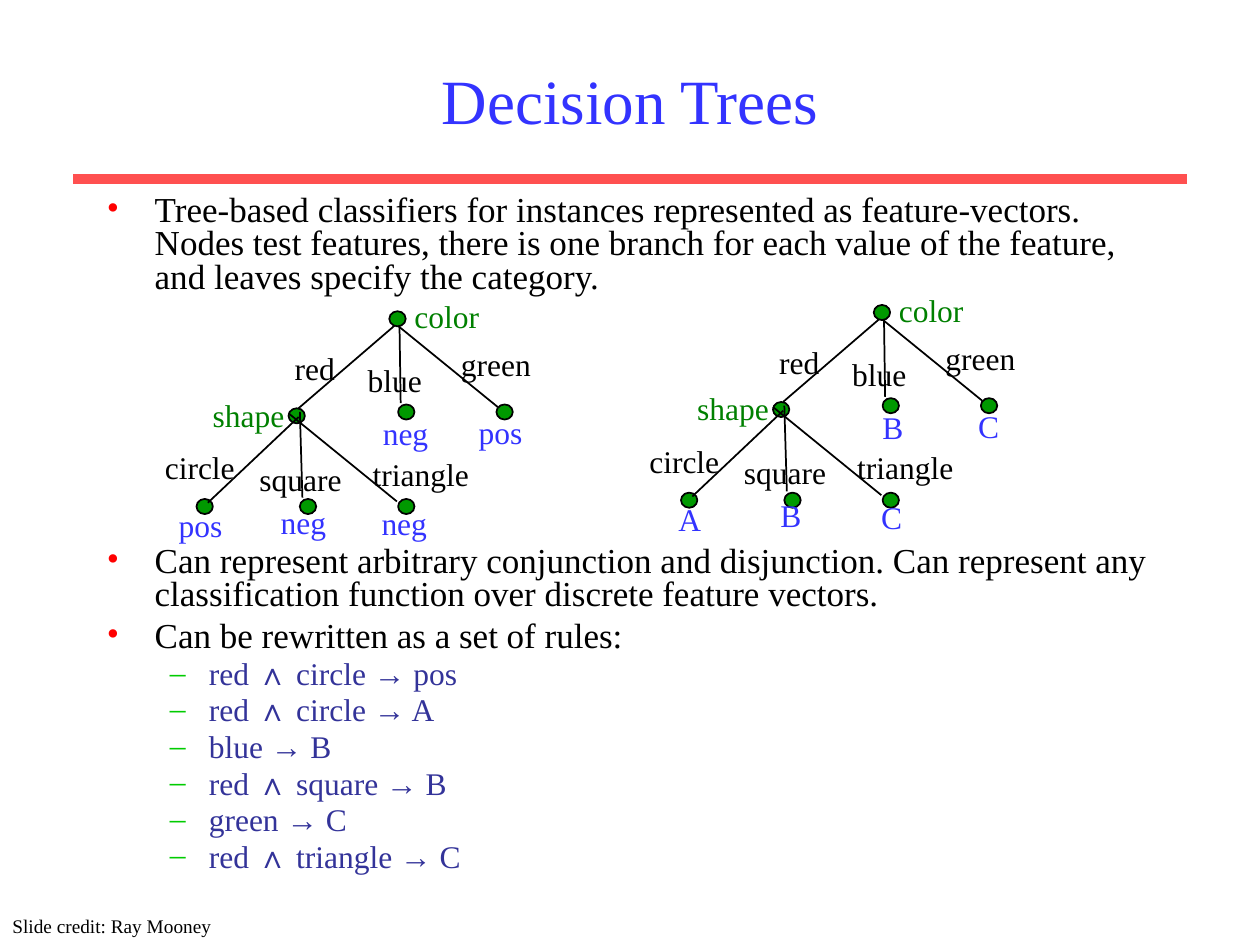
"""Build the Decision Trees slide: two labelled trees between bullet points and rules."""
from dataclasses import dataclass
from typing import NamedTuple

from lxml import etree
from pptx import Presentation
from pptx.dml.color import RGBColor
from pptx.enum.shapes import MSO_CONNECTOR, MSO_SHAPE
from pptx.enum.text import MSO_ANCHOR, PP_ALIGN
from pptx.oxml.ns import qn
from pptx.util import Inches, Pt

OVAL = MSO_SHAPE.OVAL
STRAIGHT = MSO_CONNECTOR.STRAIGHT
LEFT, CENTER = PP_ALIGN.LEFT, PP_ALIGN.CENTER
TOP, MIDDLE = MSO_ANCHOR.TOP, MSO_ANCHOR.MIDDLE
COLUMNS, ROWS = 1000, 750
DOT_WIDTH, DOT_HEIGHT, LABEL_HEIGHT = 13, 12, 40
LETTER_INDENT = 12


@dataclass(frozen=True)
class Theme:
    font: str = "Times New Roman"
    title: str = "3333FF"
    rule: str = "FF5050"
    ink: str = "000000"
    feature: str = "008000"
    outcome: str = "3333FF"
    dot: str = "009900"
    bullet: str = "FF0000"
    dash: str = "00CC00"
    derived: str = "333399"
    title_size: int = 36
    body_size: int = 20
    label_size: int = 18
    credit_size: int = 11


class Spot(NamedTuple):
    column: float
    row: float

    def moved(self, other: "Spot") -> "Spot":
        return Spot(self.column + other.column, self.row + other.row)


class Label(NamedTuple):
    text: str
    spot: Spot
    width: float
    color: str


class Fan(NamedTuple):
    parent: Spot
    children: tuple
    starts: tuple
    ends: tuple


class Level(NamedTuple):
    mark: str
    mark_color: str
    color: str
    size: int
    margin: float
    hang: float
    before: float


class Point(NamedTuple):
    text: str
    level: Level
    before: float


THEME = Theme()
FANS = (
    Fan(Spot(309, 247),
        (Spot(-80, 77), Spot(7, 74), Spot(85, 74)),
        (Spot(7, 9), Spot(8, 5), Spot(0, 6)),
        (Spot(-72, 77), Spot(9, 73), Spot(86, 76))),
    Fan(Spot(229, 324),
        (Spot(-73, 72), Spot(9, 72), Spot(87, 72)),
        (Spot(8, 7), Spot(9, 3), Spot(0, 4)),
        (Spot(-64, 75), Spot(11, 71), Spot(86, 74))),
)
TESTS = (
    Label("color", Spot(319, 231), 71, THEME.feature),
    Label("red", Spot(224, 272), 52, THEME.ink),
    Label("blue", Spot(282, 282), 63, THEME.ink),
    Label("green", Spot(356, 269), 75, THEME.ink),
    Label("shape", Spot(159, 309), 77, THEME.feature),
    Label("circle", Spot(121, 351), 75, THEME.ink),
    Label("square", Spot(196, 360), 85, THEME.ink),
    Label("triangle", Spot(286, 356), 96, THEME.ink),
)
OUTCOME_SPOTS = (Spot(294, 324), Spot(370, 323), Spot(132, 397), Spot(213, 394), Spot(293, 395))
OUTCOME_WIDTHS = {"neg": 56, "pos": 55, "A": 38, "B": 37, "C": 37}
TREES = (
    (Spot(0, 0), ("neg", "pos", "pos", "neg", "neg")),
    (Spot(384.5, -5), ("B", "C", "A", "B", "C")),
)
MAIN = Level("•", THEME.bullet, THEME.ink, THEME.body_size, 0.38, -0.38, 4.4)
RULE = Level("–", THEME.dash, THEME.derived, THEME.label_size, 0.81, -0.31, 3.6)
TREE_GAP = 143
RULES = ("red ∧ circle → pos", "red ∧ circle → A", "blue → B",
         "red ∧ square → B", "green → C", "red ∧ triangle → C")
POINTS = (
    Point("Tree-based classifiers for instances represented as feature-vectors. Nodes test features, "
          "there is one branch for each value of the feature, and leaves specify the category.",
          MAIN, MAIN.before),
    Point("Can represent arbitrary conjunction and disjunction. Can represent any classification "
          "function over discrete feature vectors.", MAIN, TREE_GAP),
    Point("Can be rewritten as a set of rules:", MAIN, MAIN.before),
    *(Point(rule, RULE, RULE.before) for rule in RULES),
)


def across(columns: float) -> int:
    return Inches(10 * columns / COLUMNS)


def down(rows: float) -> int:
    return Inches(7.5 * rows / ROWS)


def add_span(para, text: str, size: int, color: str) -> None:
    span = para.add_run()
    span.text = text
    span.font.name = THEME.font
    span.font.size = Pt(size)
    span.font.color.rgb = RGBColor.from_string(color)


def add_box(shapes, spot: Spot, width: float, height: float, wrap: bool, anchor=TOP):
    box = shapes.add_textbox(across(spot.column), down(spot.row), across(width), down(height))
    frame = box.text_frame
    frame.word_wrap = wrap
    frame.vertical_anchor = anchor
    if not wrap:
        frame.margin_right = 0
    return frame


def add_text(shapes, label: Label, height: float, size: int, wrap=False, align=LEFT, anchor=TOP) -> None:
    para = add_box(shapes, label.spot, label.width, height, wrap, anchor).paragraphs[0]
    para.alignment = align
    add_span(para, label.text, size, label.color)


def add_line(shapes, start: Spot, end: Spot, color: str, weight: float) -> None:
    line = shapes.add_connector(STRAIGHT, across(start.column), down(start.row),
                                across(end.column), down(end.row))
    line.line.color.rgb = RGBColor.from_string(color)
    line.line.width = Pt(weight)
    etree.SubElement(line._element.spPr, qn("a:effectLst"))


def add_dot(shapes, spot: Spot) -> None:
    dot = shapes.add_shape(OVAL, across(spot.column), down(spot.row), across(DOT_WIDTH), down(DOT_HEIGHT))
    dot.shadow.inherit = False
    dot.fill.solid()
    dot.fill.fore_color.rgb = RGBColor.from_string(THEME.dot)
    dot.line.color.rgb = RGBColor.from_string(THEME.ink)
    dot.line.width = Pt(1)


def add_tree(page, shift: Spot, outcomes: tuple) -> None:
    shapes = page.shapes.add_group_shape().shapes
    for fan in FANS:
        parent = fan.parent.moved(shift)
        for child in fan.children:
            add_dot(shapes, parent.moved(child))
        for start, end in zip(fan.starts, fan.ends):
            add_line(shapes, parent.moved(start), parent.moved(end), THEME.ink, 1)
        if fan is FANS[0]:
            add_dot(shapes, parent)
    leaves = [Label(text, spot.moved(Spot(LETTER_INDENT if len(text) == 1 else 0, 0)),
                    OUTCOME_WIDTHS[text], THEME.outcome)
              for text, spot in zip(outcomes, OUTCOME_SPOTS)]
    for label in (*TESTS, *leaves):
        add_text(shapes, label._replace(spot=label.spot.moved(shift)), LABEL_HEIGHT, THEME.label_size)


def add_point(para, point: Point) -> None:
    level = point.level
    para.level = 1 if level is RULE else 0
    para.line_spacing = 0.8
    para.space_before = Pt(point.before)
    props = para._p.get_or_add_pPr()
    props.set("marL", str(Inches(level.margin)))
    props.set("indent", str(Inches(level.hang)))
    color = etree.SubElement(props, qn("a:buClr"))
    etree.SubElement(color, qn("a:srgbClr"), val=level.mark_color)
    etree.SubElement(props, qn("a:buFont"), typeface=THEME.font)
    etree.SubElement(props, qn("a:buChar"), char=level.mark)
    add_span(para, point.text, level.size, level.color)


def main() -> None:
    deck = Presentation()
    deck.slide_width, deck.slide_height = across(COLUMNS), down(ROWS)
    page = deck.slides.add_slide(deck.slide_layouts[6])
    add_line(page.shapes, Spot(58, 142), Spot(942, 142), THEME.rule, 6)
    add_text(page.shapes, Label("Decision Trees", Spot(75, 25), 850, THEME.title), 108,
             THEME.title_size, True, CENTER, MIDDLE)
    body = add_box(page.shapes, Spot(75, 150), 850, 513, True)
    for index, point in enumerate(POINTS):
        add_point(body.add_paragraph() if index else body.paragraphs[0], point)
    for shift, outcomes in TREES:
        add_tree(page, shift, outcomes)
    add_text(page.shapes, Label("Slide credit: Ray Mooney", Spot(0, 721), 187, THEME.ink), 29,
             THEME.credit_size)
    deck.save("out.pptx")


if __name__ == "__main__":
    main()
